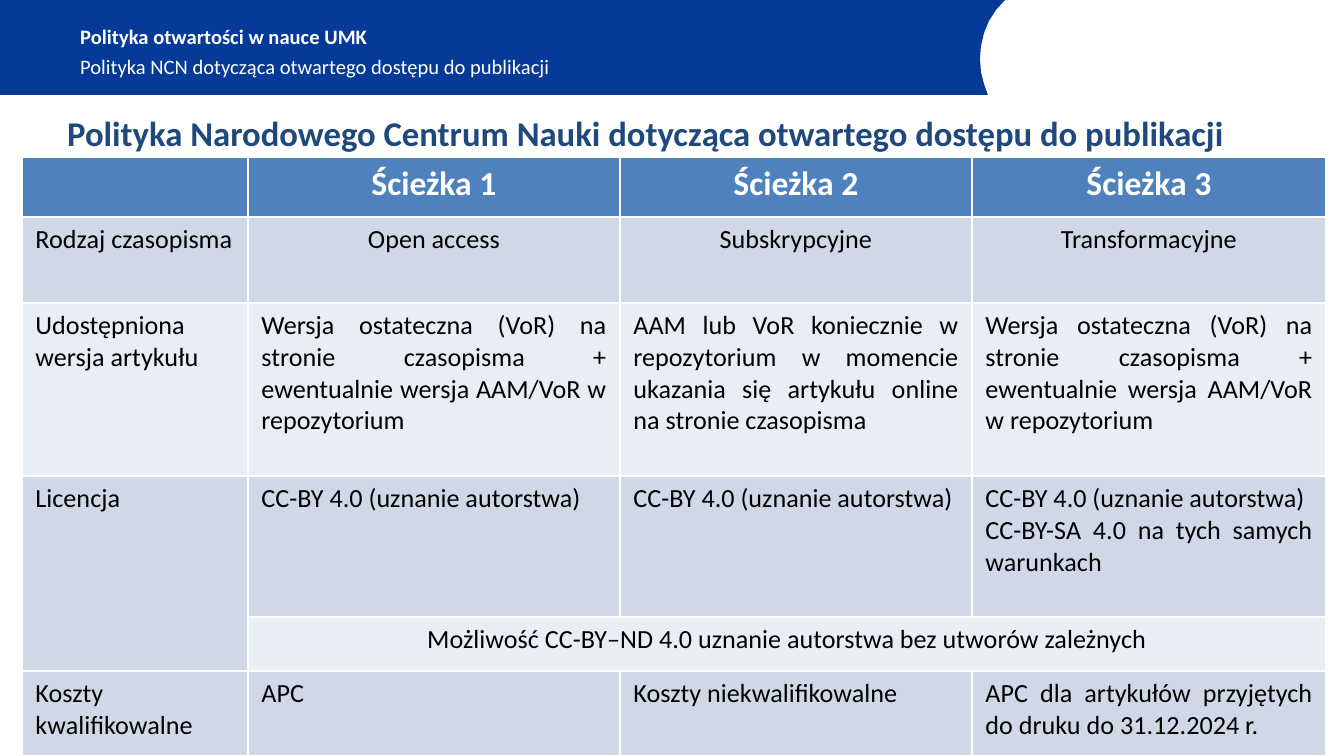
from pptx import Presentation
from pptx import util as u
from pptx.dml.color import RGBColor
from pptx.enum import text

PX = 914400 / 134.4
FONT = "Calibri"
COLORS = {
    "banner": "053A98",
    "title": "1F497D",
    "header": "4F81BD",
    "dark_band": "D0D8E8",
    "light_band": "E9EDF4",
    "white": "FFFFFF",
    "black": "000000",
}


def px(value):
    return u.Emu(round(value * PX))


def style(paragraph, size, color, bold=False, align=text.PP_ALIGN.LEFT):
    paragraph.alignment = align
    paragraph.font.name = FONT
    paragraph.font.size = u.Pt(size)
    paragraph.font.bold = bold
    paragraph.font.color.rgb = RGBColor.from_string(COLORS[color])


presentation = Presentation()
presentation.slide_width = px(1344)
presentation.slide_height = px(756)
slide = presentation.slides.add_slide(presentation.slide_layouts[6])

builder = slide.shapes.build_freeform(0, 0, scale=PX)
builder.add_line_segments(
    [(1005, 0), (996, 10), (989, 21), (984, 33), (981, 46), (980, 59),
     (981, 72), (984, 84), (988, 95), (0, 95)]
)
banner = builder.convert_to_shape()
banner.shadow.inherit = False
banner.fill.solid()
banner.fill.fore_color.rgb = RGBColor.from_string(COLORS["banner"])
banner.line.fill.background()

headings = [
    ("Polityka otwartości w nauce UMK", (67, 17, 864, 38), 11, "white", True),
    ("Polityka NCN dotycząca otwartego dostępu do publikacji",
     (67, 46, 864, 40), 11, "white", False),
    ("Polityka Narodowego Centrum Nauki dotycząca otwartego dostępu do publikacji",
     (54, 100, 1259, 65), 18.6, "title", True),
]
for wording, bounds, size, color, bold in headings:
    frame = slide.shapes.add_textbox(*map(px, bounds)).text_frame
    frame.word_wrap = True
    frame.vertical_anchor = text.MSO_ANCHOR.MIDDLE
    frame.text = wording
    style(frame.paragraphs[0], size, color, bold)

column_widths = [226, 372, 352, 354]
row_heights = [60, 86, 173, 141, 54, 85]
final_version = ("Wersja ostateczna (VoR) na stronie czasopisma + "
                 "ewentualnie wersja AAM/VoR w repozytorium")
license_name = "CC-BY 4.0 (uznanie autorstwa)"
rows = [
    ["", "Ścieżka 1", "Ścieżka 2", "Ścieżka 3"],
    ["Rodzaj czasopisma", "Open access", "Subskrypcyjne", "Transformacyjne"],
    ["Udostępniona wersja artykułu", final_version,
     "AAM lub VoR koniecznie w repozytorium w momencie ukazania się "
     "artykułu online na stronie czasopisma", final_version],
    ["Licencja", license_name, license_name,
     license_name + "\nCC-BY-SA 4.0 na tych samych warunkach"],
    ["", "Możliwość CC-BY–ND 4.0 uznanie autorstwa bez utworów zależnych", "", ""],
    ["Koszty kwalifikowalne", "APC", "Koszty niekwalifikowalne",
     "APC dla artykułów przyjętych do druku do 31.12.2024 r."],
]
bands = ["header", "dark_band", "light_band", "dark_band", "light_band", "dark_band"]
centered_rows = {0, 1, 4}

table = slide.shapes.add_table(
    len(rows), len(column_widths), px(22), px(157),
    px(sum(column_widths)), px(sum(row_heights)),
).table
for column, width in zip(table.columns, column_widths):
    column.width = px(width)
for row, height in zip(table.rows, row_heights):
    row.height = px(height)
table.cell(3, 0).merge(table.cell(4, 0))
table.cell(4, 1).merge(table.cell(4, 3))

for row_index, (wordings, band) in enumerate(zip(rows, bands)):
    is_header = row_index == 0
    for column_index, wording in enumerate(wordings):
        cell = table.cell(row_index, column_index)
        cell.fill.solid()
        cell.fill.fore_color.rgb = RGBColor.from_string(COLORS[band])
        cell.text = wording
        centered = row_index in centered_rows and column_index > 0
        align = text.PP_ALIGN.CENTER if centered else text.PP_ALIGN.JUSTIFY
        for paragraph in cell.text_frame.paragraphs:
            style(paragraph, 18 if is_header else 14,
                  "white" if is_header else "black", is_header, align)

presentation.save("out.pptx")
